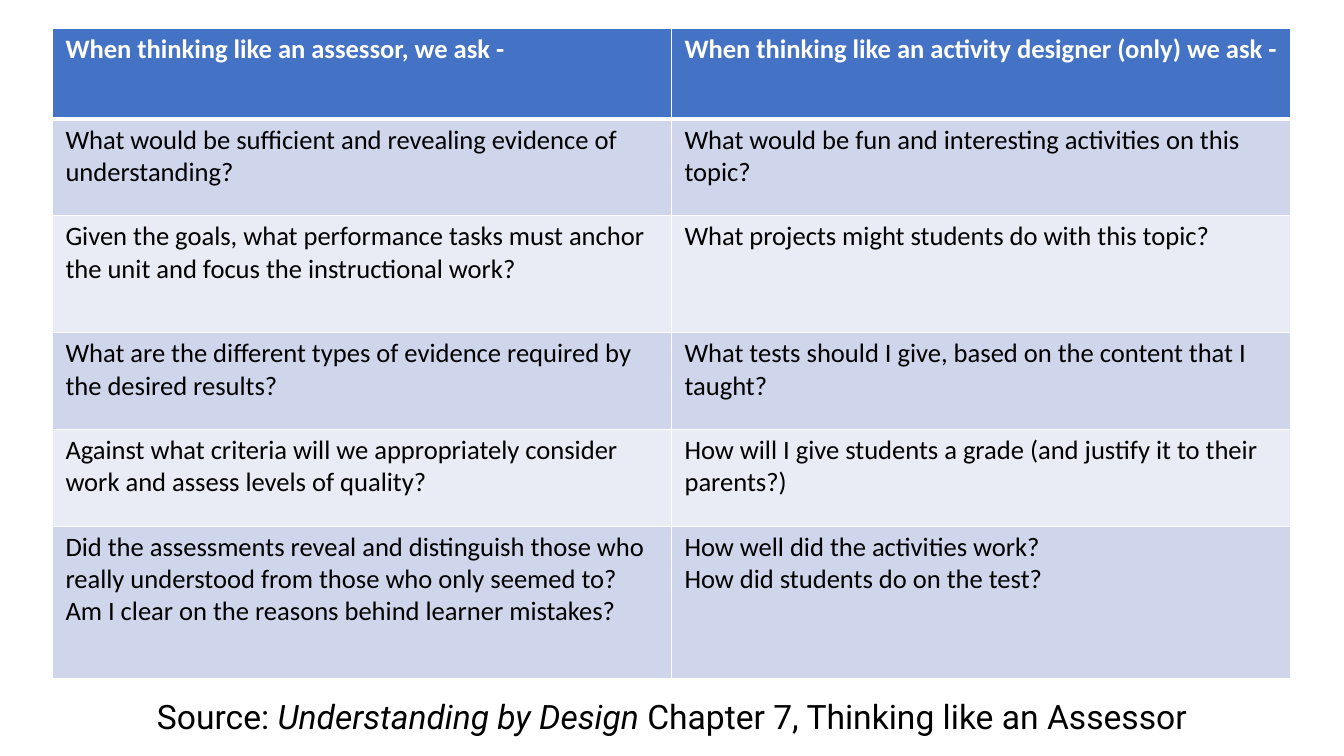
from dataclasses import dataclass

from lxml import etree
from pptx import Presentation
from pptx.dml.color import RGBColor
from pptx.enum.text import MSO_ANCHOR, PP_ALIGN
from pptx.oxml.ns import qn
from pptx.slide import Slide
from pptx.table import _Cell
from pptx.text.text import _Run
from pptx.util import Emu, Pt

PX = 9144  # 100 px to the inch
BLANK_LAYOUT = 6
CENTER = PP_ALIGN.CENTER
TOP = MSO_ANCHOR.TOP

WHITE = RGBColor(0xFF, 0xFF, 0xFF)
BLACK = RGBColor(0x00, 0x00, 0x00)
HEADER_BLUE = RGBColor(0x44, 0x72, 0xC4)
BAND_DARK = RGBColor(0xCF, 0xD5, 0xEA)
BAND_LIGHT = RGBColor(0xE9, 0xEB, 0xF5)

HEADER_FORMAT = {"name": "Calibri", "size": Pt(19), "bold": True}
BODY_FORMAT = {"name": "Calibri", "size": Pt(19), "bold": False}
SOURCE_FORMAT = {"name": "Roboto", "size": Pt(24)}

CELL_MARGINS = {"margin_left": 13, "margin_top": 5, "margin_right": 13, "margin_bottom": 5}
SOURCE_MARGINS = {"margin_left": 13, "margin_top": 7, "margin_right": 13, "margin_bottom": 7}

THIN_BORDER = Pt(1)
HEADER_RULE = Pt(3)
COLUMN_WIDTH = 614


@dataclass(frozen=True)
class QuestionRow:
    height: int
    assessor: str
    designer: str


QUESTION_ROWS = [
    QuestionRow(90, "When thinking like an assessor, we ask -",
                "When thinking like an activity designer (only) we ask -"),
    QuestionRow(96, "What would be sufficient and revealing evidence of understanding?",
                "What would be fun and interesting activities on this topic?"),
    QuestionRow(116, "Given the goals, what performance tasks must anchor the unit "
                "and focus the instructional work?",
                "What projects might students do with this topic?"),
    QuestionRow(96, "What are the different types of evidence required by the desired results?",
                "What tests should I give, based on the content that I taught?"),
    QuestionRow(96, "Against what criteria will we appropriately consider work "
                "and assess levels of quality?",
                "How will I give students a grade (and justify it to their parents?)"),
    QuestionRow(151, "Did the assessments reveal and distinguish those who really understood "
                "from those who only seemed to?\vAm I clear on the reasons behind learner mistakes?",
                "How well did the activities work?\nHow did students do on the test?"),
]


def px(length: int) -> Emu:
    return Emu(length * PX)


def set_margins(target, margins: dict[str, int]) -> None:
    for side, length in margins.items():
        setattr(target, side, px(length))


def format_run(run: _Run, values: dict, color: RGBColor) -> None:
    for name, value in values.items():
        setattr(run.font, name, value)
    run.font.color.rgb = color


def add_borders(cell: _Cell, top: Emu, bottom: Emu) -> None:
    """Outline the cell in white; call this before setting its fill."""
    properties = cell._tc.get_or_add_tcPr()
    widths = {"a:lnL": THIN_BORDER, "a:lnR": THIN_BORDER, "a:lnT": top, "a:lnB": bottom}
    for tag, width in widths.items():
        line = etree.SubElement(properties, qn(tag), w=str(int(width)))
        fill = etree.SubElement(line, qn("a:solidFill"))
        etree.SubElement(fill, qn("a:srgbClr"), val=str(WHITE))


def fill_cell(cell: _Cell, text: str, row_index: int) -> None:
    is_header = row_index == 0
    add_borders(cell, HEADER_RULE if row_index == 1 else THIN_BORDER,
                HEADER_RULE if is_header else THIN_BORDER)
    cell.fill.solid()
    band = BAND_DARK if row_index % 2 else BAND_LIGHT
    cell.fill.fore_color.rgb = HEADER_BLUE if is_header else band
    set_margins(cell, CELL_MARGINS)
    cell.vertical_anchor = TOP
    cell.text = text
    for para in cell.text_frame.paragraphs:
        for run in para.runs:
            format_run(run, HEADER_FORMAT if is_header else BODY_FORMAT,
                       WHITE if is_header else BLACK)


def add_question_table(slide: Slide) -> None:
    height = sum(row.height for row in QUESTION_ROWS)
    table = slide.shapes.add_table(len(QUESTION_ROWS), 2, px(52), px(28),
                                   px(2 * COLUMN_WIDTH), px(height)).table
    for column in table.columns:
        column.width = px(COLUMN_WIDTH)
    for row_index, row in enumerate(QUESTION_ROWS):
        table.rows[row_index].height = px(row.height)
        for column_index, text in enumerate((row.assessor, row.designer)):
            fill_cell(table.cell(row_index, column_index), text, row_index)


def add_source_line(slide: Slide) -> None:
    box = slide.shapes.add_textbox(px(48), px(683), px(1237), px(56))
    frame = box.text_frame
    frame.word_wrap = True
    set_margins(frame, SOURCE_MARGINS)
    para = frame.paragraphs[0]
    para.alignment = CENTER
    spans = [("Source: ", False), ("Understanding by Design ", True),
             ("Chapter 7, Thinking like an Assessor", False)]
    for text, italic in spans:
        run = para.add_run()
        run.text = text
        format_run(run, SOURCE_FORMAT | {"italic": italic}, BLACK)


def main() -> None:
    deck = Presentation()
    deck.slide_width, deck.slide_height = px(1333), px(750)
    slide = deck.slides.add_slide(deck.slide_layouts[BLANK_LAYOUT])
    add_question_table(slide)
    add_source_line(slide)
    deck.save("out.pptx")


if __name__ == "__main__":
    main()
